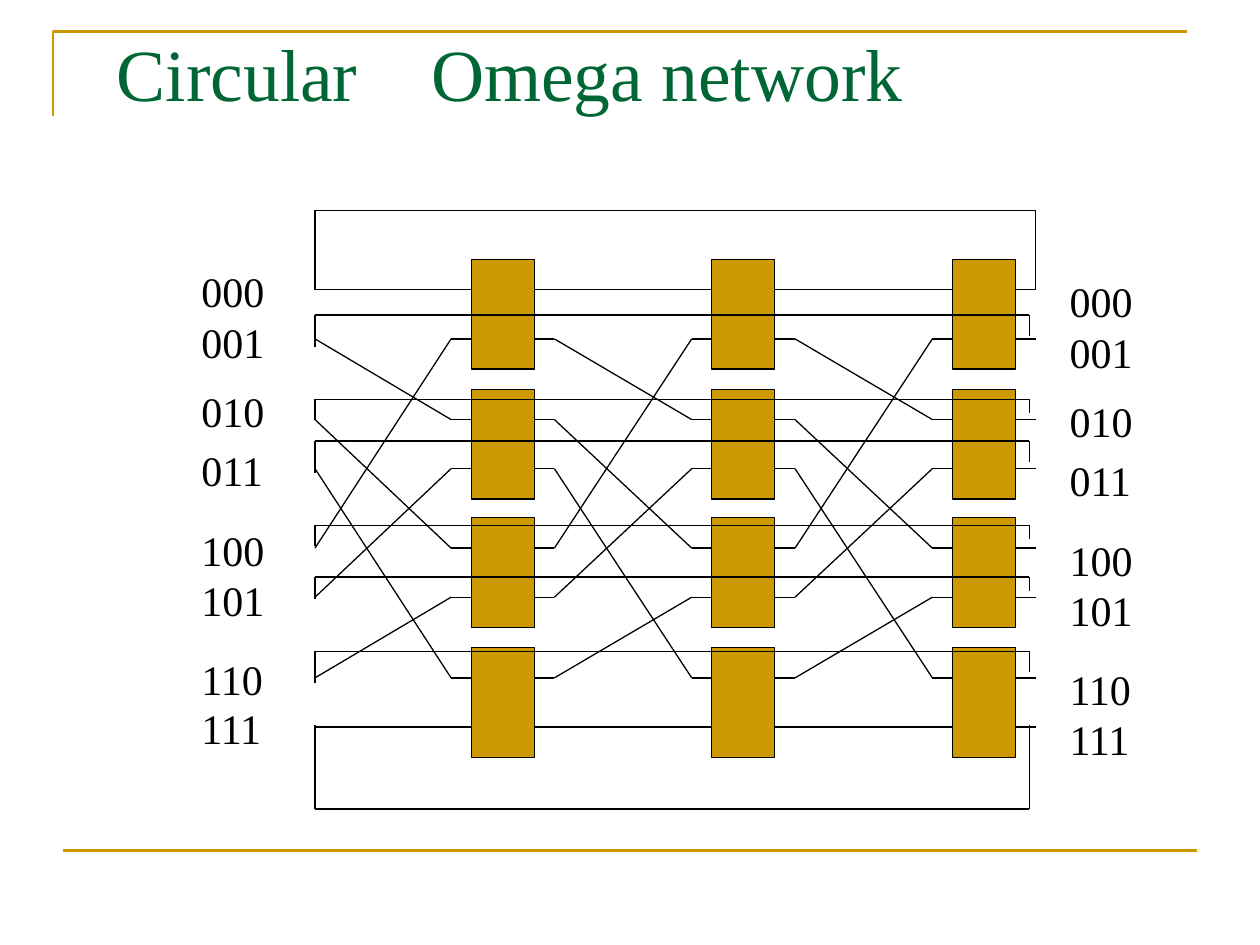
from dataclasses import dataclass

from lxml import etree
from pptx import Presentation
from pptx import util as u
from pptx.dml.color import RGBColor
from pptx.enum import shapes, text
from pptx.oxml import ns


@dataclass(frozen=True)
class Theme:
    font: str = "Times New Roman"
    gold: str = "CC9900"
    green: str = "006633"
    black: str = "000000"
    title_size: float = 42
    label_size: float = 24
    frame_width: float = 1.5
    wire_width: float = 0.75


T = Theme()

# Switch grid: three stages of four switches, two wires per switch
STAGE_X = (3.74, 5.65, 7.56)
ROW_Y = (2.06, 3.09, 4.11, 5.14)
SWITCH_W, SWITCH_H = 0.5, 0.87
STUB = 0.16
WIRE_Y = [y + dy for y in ROW_Y for dy in (0.24, 0.63)]
LEFT_X, RIGHT_X, LOOP_X = 2.5, 8.22, 8.17

LABEL_Y = (2.06, 2.46, 3.01, 3.48, 4.11, 4.51, 5.14, 5.53)
LABEL_COLUMNS = ((1.5, 0), (8.39, 0.08))  # left edge, downward shift

# Feedback loops: right x, right end y, level y, left end y
LOOPS = (
    (RIGHT_X, 2.3, 1.67, 2.3),
    (LOOP_X, 2.67, 2.5, 2.75),
    (LOOP_X, 3.28, 3.17, 3.33),
    (LOOP_X, 3.67, 3.5, 3.75),
    (LOOP_X, 4.28, 4.17, 4.33),
    (LOOP_X, 4.69, 4.58, 4.75),
    (LOOP_X, 5.33, 5.17, 5.42),
    (LOOP_X, 5.75, 6.42, 5.75),
)


def rgb(color):
    return RGBColor.from_string(color)


def add_text(s, content, x, y, w, h, *, size, color, wrap=False,
             anchor=text.MSO_ANCHOR.TOP):
    tf = s.shapes.add_textbox(*map(u.Inches, (x, y, w, h))).text_frame
    tf.word_wrap = wrap
    tf.vertical_anchor = anchor
    r = tf.paragraphs[0].add_run()
    r.text = content
    r.font.name, r.font.size = T.font, u.Pt(size)
    r.font.color.rgb = rgb(color)


def add_line(s, x1, y1, x2, y2, color=T.black, width=T.wire_width):
    sp = s.shapes.add_connector(shapes.MSO_CONNECTOR.STRAIGHT,
                                *map(u.Inches, (x1, y1, x2, y2)))
    sp.line.color.rgb = rgb(color)
    sp.line.width = u.Pt(width)
    etree.SubElement(sp._element.spPr, ns.qn("a:effectLst"))


def add_switch(s, x, y):
    sp = s.shapes.add_shape(shapes.MSO_SHAPE.RECTANGLE,
                            *map(u.Inches, (x, y, SWITCH_W, SWITCH_H)))
    sp.shadow.inherit = False
    sp.fill.solid()
    sp.fill.fore_color.rgb = rgb(T.gold)
    sp.line.color.rgb = rgb(T.black)
    sp.line.width = u.Pt(T.wire_width)


def add_frame(s):
    fb = s.shapes.build_freeform(u.Inches(0.42), u.Inches(0.92))
    fb.add_line_segments([(u.Inches(x), u.Inches(y))
                          for x, y in ((0.42, 0.25), (9.42, 0.25))], close=False)
    sp = fb.convert_to_shape()
    sp.shadow.inherit = False
    sp.fill.background()
    sp.line.color.rgb = rgb(T.gold)
    sp.line.width = u.Pt(T.frame_width)
    add_line(s, 0.5, 6.75, 9.5, 6.75, T.gold, T.frame_width)


def add_stage(s, x, start_x):
    for y in ROW_Y:
        add_switch(s, x, y)
    entry, right = x - STUB, x + SWITCH_W
    for i, y in enumerate(WIRE_Y):
        add_line(s, entry, y, x, y)
        add_line(s, right, y, right + STUB, y)
        # Perfect shuffle: rotate the three-bit address left
        target = (2 * i) % 8 + i // 4
        add_line(s, start_x, y, entry, WIRE_Y[target])


def add_loop(s, right_x, right_y, level, left_y):
    add_line(s, right_x, right_y, right_x, level)
    add_line(s, right_x, level, LEFT_X, level)
    add_line(s, LEFT_X, level, LEFT_X, left_y)


def main():
    prs = Presentation()
    prs.slide_width, prs.slide_height = u.Inches(10), u.Inches(7.5)
    s = prs.slides.add_slide(prs.slide_layouts[6])

    # Frame and title
    add_frame(s)
    add_text(s, "Circular　Omega network", 0.83, 0.17, 8.5, 1.08,
             size=T.title_size, color=T.green, wrap=True)

    # Switches and shuffle wiring
    starts = (LEFT_X, *(x + SWITCH_W + STUB for x in STAGE_X[:-1]))
    for x, start_x in zip(STAGE_X, starts):
        add_stage(s, x, start_x)

    # Port addresses
    for x, shift in LABEL_COLUMNS:
        for i, y in enumerate(LABEL_Y):
            add_text(s, f"{i:03b}", x, y + shift, 0.7, 0.5,
                     size=T.label_size, color=T.black)

    # Feedback loops
    for loop in LOOPS:
        add_loop(s, *loop)

    prs.save("out.pptx")


if __name__ == "__main__":
    main()
